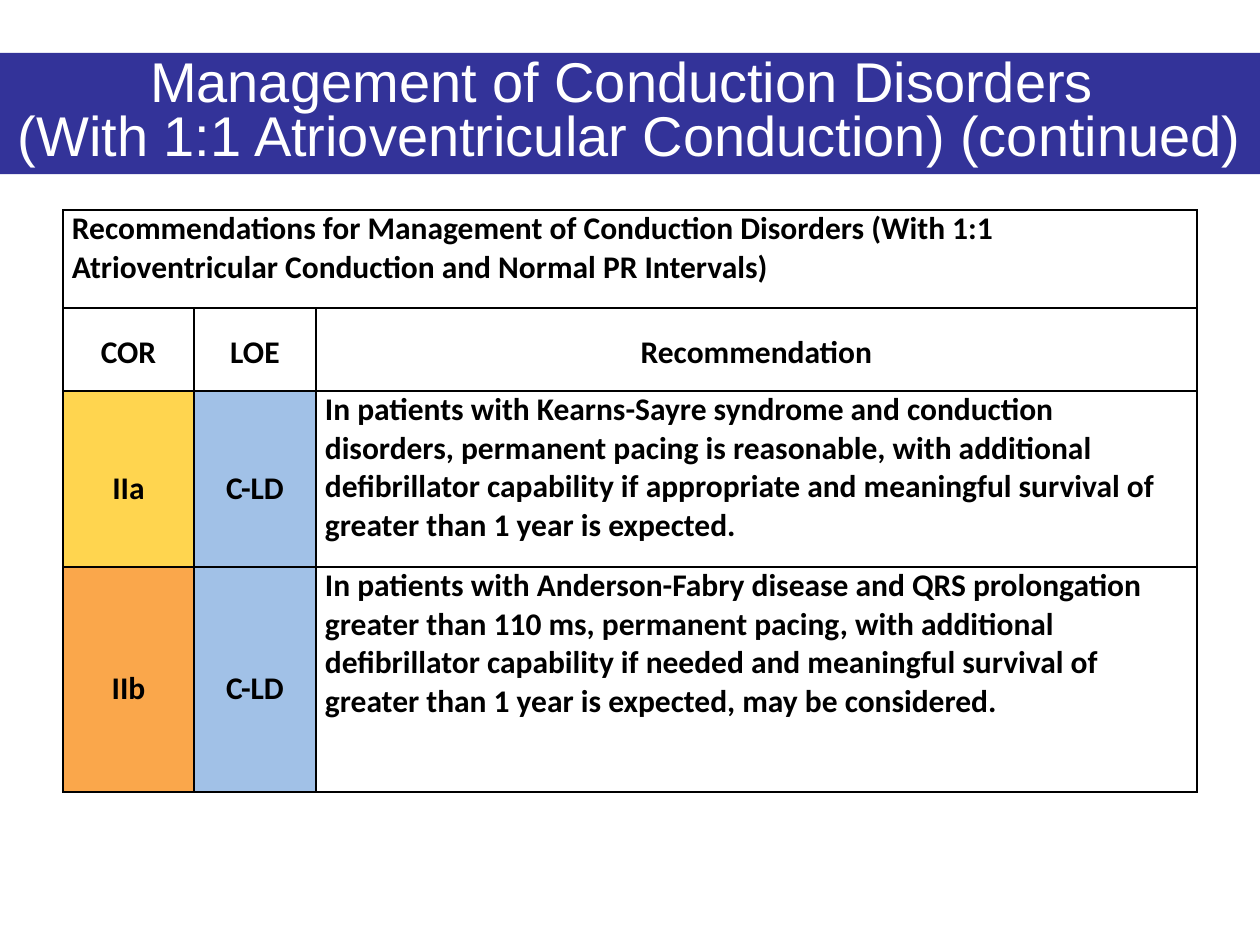
from lxml import etree
from pptx import Presentation
from pptx.dml.color import RGBColor
from pptx.enum.text import MSO_ANCHOR, MSO_AUTO_SIZE, PP_ALIGN
from pptx.oxml.ns import qn
from pptx.util import Emu, Pt

CENTER, LEFT = PP_ALIGN.CENTER, PP_ALIGN.LEFT
TOP, MIDDLE = MSO_ANCHOR.TOP, MSO_ANCHOR.MIDDLE
GROW = MSO_AUTO_SIZE.SHAPE_TO_FIT_TEXT
TITLE_ONLY = 5

INDIGO, WHITE, BLACK = "333399", "FFFFFF", "000000"
YELLOW, ORANGE, BLUE = "FFD54F", "FAA74B", "A1C1E7"

TITLE_LINES = [
    "Management of Conduction Disorders ",
    "(With 1:1 Atrioventricular Conduction) (continued)",
]
CAPTION = ("Recommendations for Management of Conduction Disorders "
           "(With 1:1 Atrioventricular Conduction and Normal PR Intervals)")
HEADINGS = ["COR", "LOE", "Recommendation"]
RECOMMENDATIONS = [
    ("IIa", YELLOW, "C-LD",
     "In patients with Kearns-Sayre syndrome and conduction disorders, "
     "permanent pacing is reasonable, with additional defibrillator capability "
     "if appropriate and meaningful survival of greater than 1 year is expected."),
    ("IIb", ORANGE, "C-LD",
     "In patients with Anderson-Fabry disease and QRS prolongation greater than "
     "110 ms, permanent pacing, with additional defibrillator capability if needed "
     "and meaningful survival of greater than 1 year is expected, may be considered."),
]
COLUMN_WIDTHS = [131, 122, 881]
ROW_HEIGHTS = [98, 83, 176, 225]


def px(length):
    return Emu(round(length * 914400 / 126))


def color(value):
    return RGBColor.from_string(value)


def add_text(para, text, font, size, ink, bold=False):
    span = para.add_run()
    span.text = text
    span.font.name = font
    span.font.size = Pt(size)
    span.font.bold = bold
    span.font.color.rgb = color(ink)


def add_title(page, left, top, width, height):
    box = page.shapes.title
    box.left, box.top, box.width, box.height = map(px, (left, top, width, height))
    box.fill.solid()
    box.fill.fore_color.rgb = color(INDIGO)
    frame = box.text_frame
    frame.word_wrap = True
    frame.auto_size = GROW
    frame.vertical_anchor = TOP
    for index, line in enumerate(TITLE_LINES):
        para = frame.add_paragraph() if index else frame.paragraphs[0]
        para.alignment = CENTER
        para.line_spacing = 0.8
        para.space_before = Pt(0)
        add_text(para, line, "Arial", 32, WHITE)


def set_borders(cell):
    properties = cell._tc.get_or_add_tcPr()
    for side in ("lnL", "lnR", "lnT", "lnB"):
        line = etree.SubElement(properties, qn("a:" + side), w=str(Pt(1)))
        fill = etree.SubElement(line, qn("a:solidFill"))
        etree.SubElement(fill, qn("a:srgbClr"), val=BLACK)


def fill_cell(cell, text, align=LEFT, anchor=TOP, spacing=None, fill=None):
    cell.vertical_anchor = anchor
    if fill:
        cell.fill.solid()
        cell.fill.fore_color.rgb = color(fill)
    para = cell.text_frame.paragraphs[0]
    para.alignment = align
    para.line_spacing = spacing
    add_text(para, text, "Calibri", 18, BLACK, bold=True)


def add_recommendations(page, left, top):
    frame = page.shapes.add_table(
        len(ROW_HEIGHTS), len(COLUMN_WIDTHS), px(left), px(top),
        px(sum(COLUMN_WIDTHS)), px(sum(ROW_HEIGHTS)))
    table = frame.table
    table.first_row = table.horz_banding = False
    for column, width in zip(table.columns, COLUMN_WIDTHS):
        column.width = px(width)
    for row, height in zip(table.rows, ROW_HEIGHTS):
        row.height = px(height)
    for cell in table.iter_cells():
        set_borders(cell)
        cell.fill.background()
        cell.margin_left = cell.margin_right = px(9)
        cell.margin_top = cell.margin_bottom = 0

    table.cell(0, 0).merge(table.cell(0, len(COLUMN_WIDTHS) - 1))
    fill_cell(table.cell(0, 0), CAPTION)
    for index, heading in enumerate(HEADINGS):
        fill_cell(table.cell(1, index), heading, CENTER, MIDDLE, 1.15)
    for index, (cor, cor_fill, loe, advice) in enumerate(RECOMMENDATIONS, start=2):
        fill_cell(table.cell(index, 0), cor, CENTER, MIDDLE, 1.5, cor_fill)
        fill_cell(table.cell(index, 1), loe, CENTER, MIDDLE, 1.5, BLUE)
        fill_cell(table.cell(index, 2), advice)


def main():
    deck = Presentation()
    deck.slide_width, deck.slide_height = px(1260), px(945)
    page = deck.slides.add_slide(deck.slide_layouts[TITLE_ONLY])
    add_title(page, 0, 53, 1260, 121)
    add_recommendations(page, 63, 210)
    deck.save("out.pptx")


if __name__ == "__main__":
    main()
